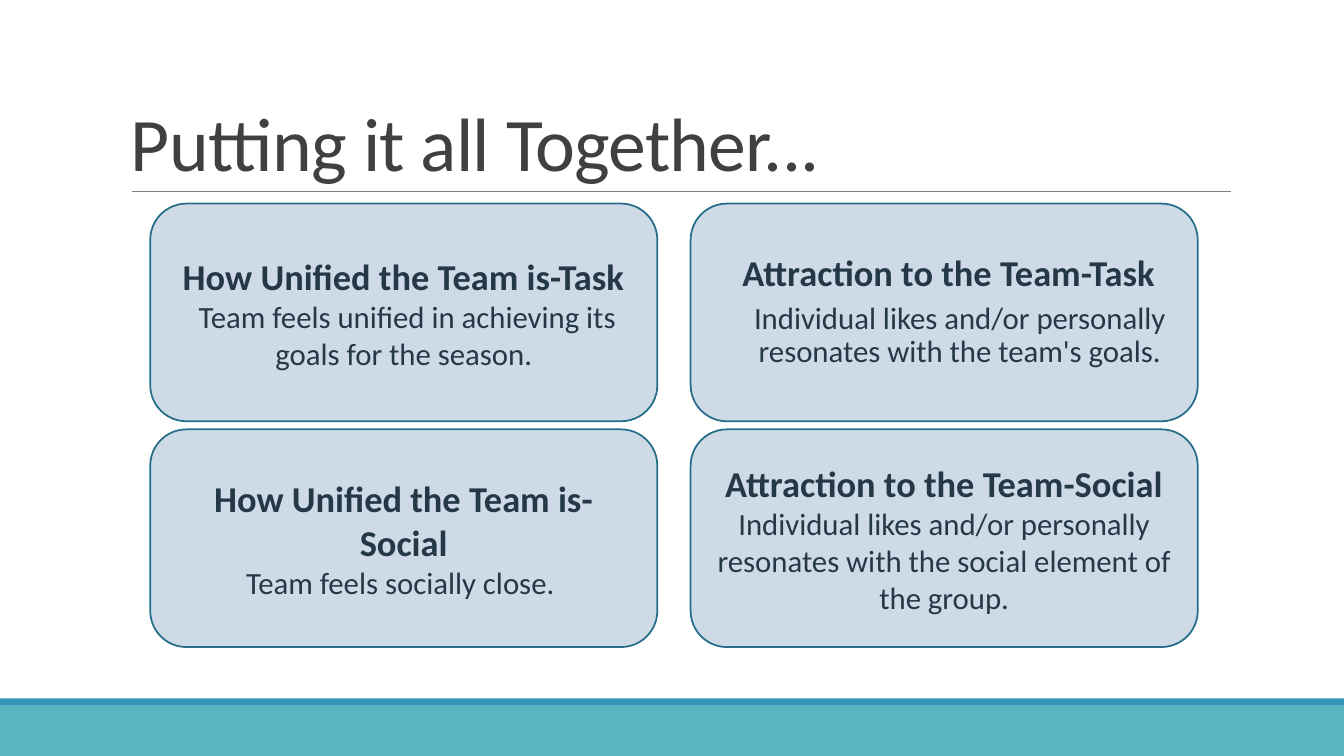
from lxml import etree
from pptx import Presentation
from pptx.dml.color import RGBColor
from pptx.enum.shapes import MSO_CONNECTOR, MSO_SHAPE
from pptx.enum.text import MSO_ANCHOR, PP_ALIGN
from pptx.oxml.ns import qn
from pptx.util import Inches, Pt

ROUNDED = MSO_SHAPE.ROUNDED_RECTANGLE
RECTANGLE = MSO_SHAPE.RECTANGLE
STRAIGHT = MSO_CONNECTOR.STRAIGHT
MIDDLE, BOTTOM = MSO_ANCHOR.MIDDLE, MSO_ANCHOR.BOTTOM
LEFT, CENTER = PP_ALIGN.LEFT, PP_ALIGN.CENTER

# Content: rows of cards, each with heading, body, and whether it is indented
TITLE = "Putting it all Together..."
CARDS = [
    [
        ("How Unified the Team is-Task",
         " Team feels unified in achieving its goals for the season.", False),
        ("Attraction to the Team-Task",
         "Individual likes and/or personally resonates with the team's goals.", True),
    ],
    [
        ("How Unified the Team is-Social", "Team feels socially close. ", False),
        ("Attraction to the Team-Social",
         "Individual likes and/or personally resonates with the social element of the group.",
         False),
    ],
]

THEME = {
    "font": "Calibri",
    "title": "404040", "text": "253848", "rule": "808080",
    "card": "CEDBE6", "border": "266D8A", "band": "58B6C0", "stripe": "3494BA",
    "title_size": 54, "heading_size": 26, "body_size": 22,
}

# Layout in inches
WIDTH, HEIGHT = 13.33, 7.5
BAND_TOP, STRIPE_TOP = 7, 6.93
CARD_LEFT, CARD_TOP = 1.49, 2.02
CARD_WIDTH, CARD_HEIGHT = 5.03, 2.16
COLUMN_STEP, ROW_STEP = 5.36, 2.24
CARD_INDENT = 0.31


def color(name):
    return RGBColor.from_string(THEME[name])


def style(paragraph, size, color_name, bold=False):
    font = paragraph.font
    font.name = THEME["font"]
    font.size = Pt(THEME[size])
    font.bold = bold
    font.color.rgb = color(color_name)


def add_filled_shape(slide, kind, left, top, width, height, fill):
    shape = slide.shapes.add_shape(
        kind, Inches(left), Inches(top), Inches(width), Inches(height))
    shape.shadow.inherit = False
    shape.fill.solid()
    shape.fill.fore_color.rgb = color(fill)
    shape.line.fill.background()
    return shape


def add_card(slide, left, top, heading, body, indented):
    card = add_filled_shape(
        slide, ROUNDED, left, top, CARD_WIDTH, CARD_HEIGHT, "card")
    card.line.color.rgb = color("border")
    card.line.width = Pt(1.25)
    frame = card.text_frame
    frame.word_wrap = True
    frame.vertical_anchor = MIDDLE
    heading_paragraph, body_paragraph = frame.paragraphs[0], frame.add_paragraph()
    heading_paragraph.text, body_paragraph.text = heading, body
    style(heading_paragraph, "heading_size", "text", bold=True)
    style(body_paragraph, "body_size", "text")
    heading_paragraph.alignment = LEFT if indented else CENTER
    body_paragraph.alignment = CENTER
    if indented:
        for paragraph in frame.paragraphs:
            paragraph.level = 2
            paragraph.line_spacing = 0.9
            paragraph.space_before = Pt(2)
            paragraph.space_after = Pt(4)
            properties = paragraph._p.get_or_add_pPr()
            properties.set("marL", str(Inches(CARD_INDENT)))
            properties.set("indent", "0")


def add_title(slide):
    box = slide.shapes.add_textbox(Inches(1.2), Inches(0.31), Inches(11), Inches(1.59))
    frame = box.text_frame
    frame.word_wrap = True
    frame.vertical_anchor = BOTTOM
    paragraph = frame.paragraphs[0]
    paragraph.text = TITLE
    paragraph.line_spacing = 0.85
    style(paragraph, "title_size", "title")
    paragraph.runs[0].font._element.set("spc", "-50")


def add_rule(slide):
    rule = slide.shapes.add_connector(
        STRAIGHT, Inches(1.31), Inches(1.9), Inches(12.21), Inches(1.9))
    rule.line.color.rgb = color("rule")
    rule.line.width = Pt(0.5)
    etree.SubElement(rule._element.spPr, qn("a:effectLst"))


def main():
    presentation = Presentation()
    presentation.slide_width = Inches(WIDTH)
    presentation.slide_height = Inches(HEIGHT)
    slide = presentation.slides.add_slide(presentation.slide_layouts[6])

    # Footer bands
    add_filled_shape(slide, RECTANGLE, 0, BAND_TOP, WIDTH, HEIGHT - BAND_TOP, "band")
    add_filled_shape(slide, RECTANGLE, 0, STRIPE_TOP, WIDTH, BAND_TOP - STRIPE_TOP, "stripe")

    # Title and rule
    add_rule(slide)
    add_title(slide)

    # Card grid
    for row, cards in enumerate(CARDS):
        for column, card in enumerate(cards):
            add_card(slide, CARD_LEFT + column * COLUMN_STEP,
                     CARD_TOP + row * ROW_STEP, *card)

    presentation.save("out.pptx")


if __name__ == "__main__":
    main()
